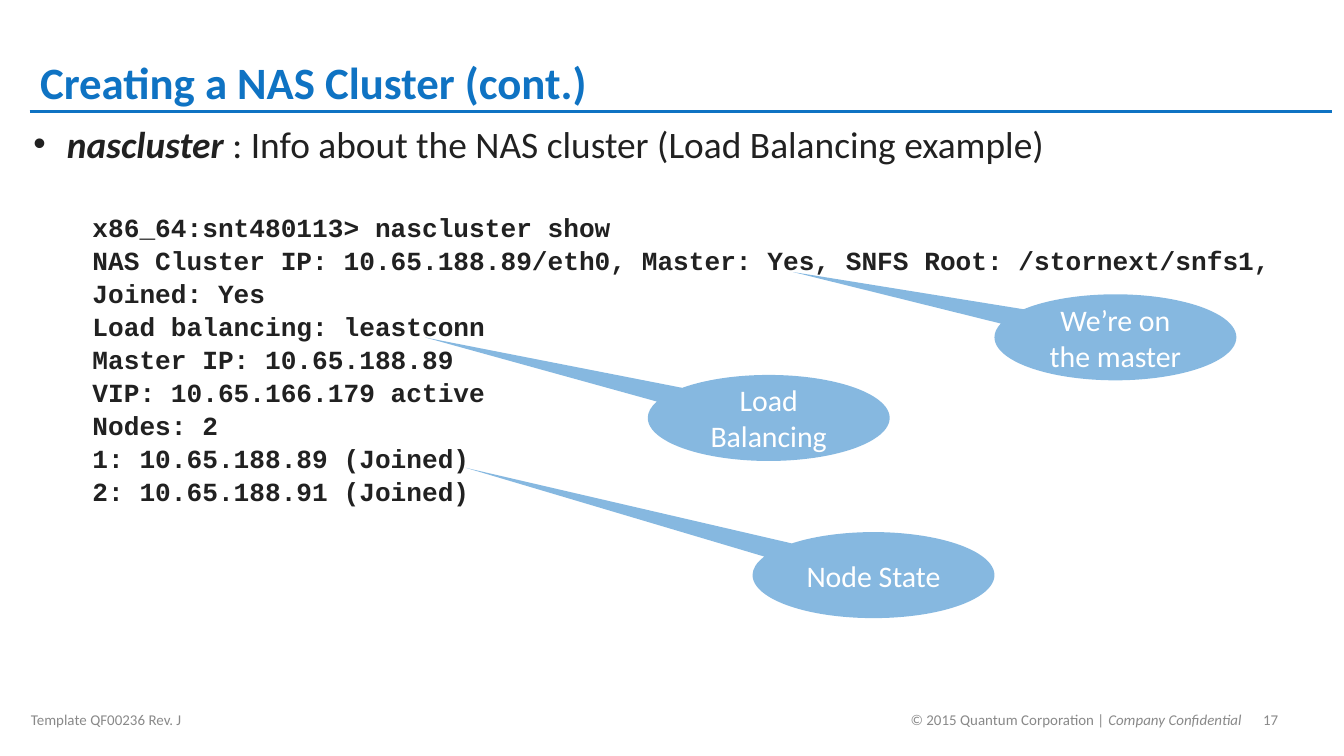
from lxml import etree
from pptx import Presentation
from pptx.dml.color import RGBColor
from pptx.enum.shapes import MSO_CONNECTOR, MSO_SHAPE
from pptx.enum.text import MSO_ANCHOR, PP_ALIGN
from pptx.oxml.ns import qn
from pptx.util import Inches, Pt

STRAIGHT = MSO_CONNECTOR.STRAIGHT
CALLOUT = MSO_SHAPE.OVAL_CALLOUT
TOP, MIDDLE, BOTTOM = MSO_ANCHOR.TOP, MSO_ANCHOR.MIDDLE, MSO_ANCHOR.BOTTOM
LEFT, CENTER, RIGHT = PP_ALIGN.LEFT, PP_ALIGN.CENTER, PP_ALIGN.RIGHT

CODE = [
    "x86_64:snt480113> nascluster show",
    "NAS Cluster IP: 10.65.188.89/eth0, Master: Yes, SNFS Root: /stornext/snfs1, Joined: Yes",
    "Load balancing: leastconn",
    "Master IP: 10.65.188.89",
    "VIP: 10.65.166.179 active",
    "Nodes: 2",
    "1: 10.65.188.89 (Joined)",
    "2: 10.65.188.91 (Joined)",
]
CALLOUTS = [
    ("We’re on the master", 7.4, 2.19, (-1.333, -0.759)),
    ("Node State", 5.6, 3.96, (-1.686, -1.248)),
    ("Load Balancing", 4.82, 2.79, (-1.42, -0.936)),
]


def color(value):
    return RGBColor.from_string(value)


class SlideBuilder:
    blue, ink, gray, white = "0F73C3", "212121", "898989", "FFFFFF"
    sans, mono = "Calibri", "Courier New"

    def __init__(self, page):
        self.page = page

    def style(self, font, size, tone, name=sans, bold=False, italic=False):
        font.size, font.name = Pt(size), name
        font.bold, font.italic = bold, italic
        font.color.rgb = color(tone)

    def frame(self, left, top, width, height, anchor=MIDDLE, margins=(0, 0)):
        box = self.page.shapes.add_textbox(
            Inches(left), Inches(top), Inches(width), Inches(height))
        frame = box.text_frame
        frame.word_wrap = True
        frame.vertical_anchor = anchor
        frame.margin_left, frame.margin_right = map(Inches, margins)
        frame.margin_top = frame.margin_bottom = 0
        return frame

    def span(self, para, text, size, tone, **options):
        span = para.add_run()
        span.text = text
        self.style(span.font, size, tone, **options)

    def title(self, text):
        para = self.frame(0.2, 0.06, 8.13, 0.75, BOTTOM, (0.1, 0)).paragraphs[0]
        para.line_spacing = Pt(24)
        self.span(para, text, 24, self.blue, bold=True)

    def footer(self, left, width, align, text, emphasis=""):
        para = self.frame(left, 5.22, width, 0.27).paragraphs[0]
        para.alignment = align
        self.span(para, text, 8, self.gray)
        if emphasis:
            self.span(para, emphasis, 8, self.gray, italic=True)

    def rule(self, left, right, top):
        line = self.page.shapes.add_connector(
            STRAIGHT, Inches(left), Inches(top), Inches(right), Inches(top))
        line.line.color.rgb = color(self.blue)
        line.line.width = Pt(1.75)
        etree.SubElement(line._element.spPr, qn("a:effectLst"))

    def indent(self, para, margin, hanging=0):
        properties = para._p.get_or_add_pPr()
        properties.set("marL", str(Inches(margin)))
        properties.set("indent", str(-Inches(hanging)))
        return properties

    def body(self, command, summary, code):
        frame = self.frame(0.15, 0.9, 9.6, 4.4, TOP, (0.1, 0.1))
        para = frame.paragraphs[0]
        properties = self.indent(para, 0.25, 0.25)
        etree.SubElement(properties, qn("a:buSzPct"), val="95000")
        etree.SubElement(properties, qn("a:buFont"), typeface="Arial")
        etree.SubElement(properties, qn("a:buChar"), char="•")
        para.space_after = Pt(23.4)
        self.span(para, command, 20, self.ink, bold=True, italic=True)
        self.span(para, summary, 20, self.ink)
        for text in code:
            para = frame.add_paragraph()
            self.indent(para, 0.44)
            para.line_spacing = Pt(17.7)
            self.span(para, text, 14, self.ink, name=self.mono, bold=True)

    def callout(self, text, left, top, tip):
        shape = self.page.shapes.add_shape(
            CALLOUT, Inches(left), Inches(top), Inches(1.8), Inches(0.64))
        shape.adjustments[0], shape.adjustments[1] = tip
        shape.shadow.inherit = False
        shape.fill.solid()
        shape.fill.fore_color.rgb = color(self.blue)
        tone = shape._element.spPr.find(qn("a:solidFill"))[0]
        etree.SubElement(tone, qn("a:alpha"), val="50000")
        shape.line.fill.background()
        frame = shape.text_frame
        frame.word_wrap = True
        frame.vertical_anchor = MIDDLE
        para = frame.paragraphs[0]
        para.alignment = CENTER
        self.span(para, text, 16, self.white)


def main():
    deck = Presentation()
    deck.slide_width = Inches(10)
    deck.slide_height = deck.slide_width * 9 // 16
    builder = SlideBuilder(deck.slides.add_slide(deck.slide_layouts[6]))
    builder.footer(9.24, 0.43, CENTER, "17")
    builder.footer(6.08, 3.16, RIGHT, "© 2015 Quantum Corporation | ", "Company Confidential")
    builder.rule(0.22, 9.91, 0.83)
    builder.footer(0.23, 3.16, LEFT, "Template QF00236 Rev. J")
    builder.title("Creating a NAS Cluster (cont.)")
    builder.body("nascluster ", ": Info about the NAS cluster (Load Balancing example)", CODE)
    for callout in CALLOUTS:
        builder.callout(*callout)
    deck.save("out.pptx")


if __name__ == "__main__":
    main()
